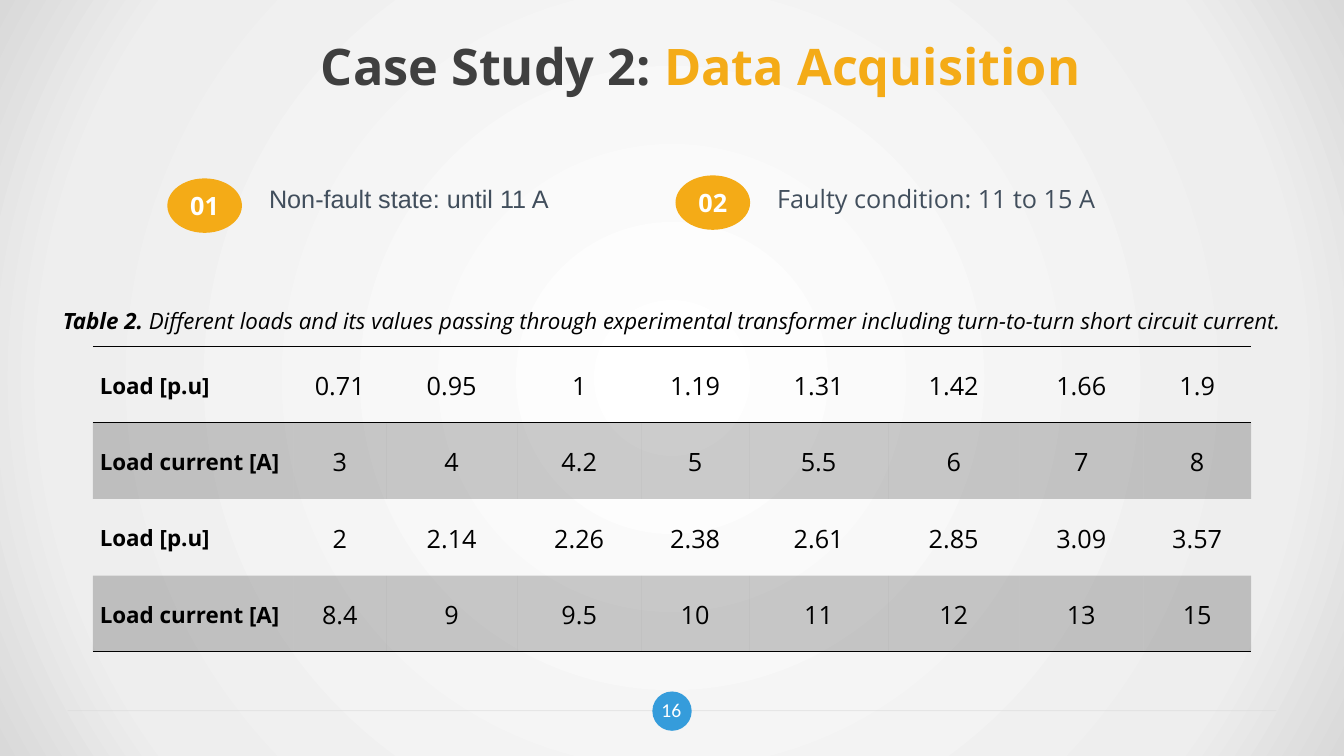
from pptx import Presentation
from pptx import util as u
from pptx.dml.color import RGBColor
from pptx.enum import shapes, text
from pptx.oxml import parse_xml
from pptx.oxml.ns import nsdecls, qn
from lxml import etree

COLORS = {"ink": "000000", "title": "3F3F3F", "accent": "F4AB17", "body": "414E5C",
          "badge": "359CDB", "rule": "D9D9D9", "white": "FFFFFF", "mid": "EEEEEE"}
CENTER = text.PP_ALIGN.CENTER
MIDDLE = text.MSO_ANCHOR.MIDDLE


def rgb(name):
    return RGBColor.from_string(COLORS[name])


def set_alpha(parent, percent):
    for clr in parent.iter(qn("a:srgbClr")):
        etree.SubElement(clr, qn("a:alpha")).set("val", str(percent * 1000))


class Deck:
    font = "Open Sans"

    def __init__(self, width, height):
        self.prs = Presentation()
        self.prs.slide_width, self.prs.slide_height = u.Inches(width), u.Inches(height)
        self.s = self.prs.slides.add_slide(self.prs.slide_layouts[5])

    def box(self, at):
        return [u.Inches(v) for v in at]

    def background(self, stops):
        gs = "".join(f'<a:gs pos="{pos * 1000}"><a:srgbClr val="{COLORS[c]}"/></a:gs>'
                     for pos, c in stops)
        bg = parse_xml(
            f'<p:bg {nsdecls("p", "a")}><p:bgPr><a:gradFill rotWithShape="1"><a:gsLst>{gs}'
            '</a:gsLst><a:path path="circle"><a:fillToRect l="50000" t="50000" r="50000" '
            'b="50000"/></a:path></a:gradFill><a:effectLst/></p:bgPr></p:bg>')
        self.s.element.cSld.insert(0, bg)

    def run(self, p, words, size, color, bold=False, italic=False, font=None):
        r = p.add_run()
        r.text = words
        r.font.size, r.font.name = u.Pt(size), font or self.font
        r.font.bold, r.font.italic = bold, italic
        r.font.color.rgb = rgb(color)

    def frame(self, sp, align=None, anchor=None, insets=(0.1, 0.05)):
        tf = sp.text_frame
        tf.word_wrap = True
        tf.auto_size = text.MSO_AUTO_SIZE.NONE
        tf.vertical_anchor = anchor
        tf.margin_left = tf.margin_right = u.Inches(insets[0])
        tf.margin_top = tf.margin_bottom = u.Inches(insets[1])
        tf.paragraphs[0].alignment = align
        return tf.paragraphs[0]

    def title(self, at):
        sp = self.s.shapes.title
        sp.left, sp.top, sp.width, sp.height = self.box(at)
        return self.frame(sp, CENTER, MIDDLE, (0.13, 0.07))

    def textbox(self, at, **style):
        sp = self.s.shapes.add_textbox(*self.box(at))
        return self.frame(sp, **style)

    def ellipse(self, at, color):
        sp = self.s.shapes.add_shape(shapes.MSO_SHAPE.OVAL, *self.box(at))
        sp.shadow.inherit = False
        sp.fill.solid()
        sp.fill.fore_color.rgb = rgb(color)
        sp.line.fill.background()
        return self.frame(sp, CENTER, MIDDLE)

    def line(self, start, end, color, width, alpha):
        cx = self.s.shapes.add_connector(shapes.MSO_CONNECTOR.STRAIGHT,
                                         *self.box(start + end))
        cx.line.color.rgb, cx.line.width = rgb(color), u.Pt(width)
        set_alpha(cx.line._ln, alpha)
        etree.SubElement(cx._element.spPr, qn("a:effectLst"))

    def border(self, cell, side):
        cell._tc.get_or_add_tcPr().append(parse_xml(
            f'<a:{side} {nsdecls("a")} w="12700"><a:solidFill><a:srgbClr '
            f'val="{COLORS["ink"]}"/></a:solidFill></a:{side}>'))

    def table(self, at, widths, heights, rows, borders):
        shape = self.s.shapes.add_table(len(rows), len(widths), *self.box(at))
        tbl = shape.table
        tbl.first_row = tbl.horz_banding = False
        # Plain style without grid lines
        shape._element.find(".//" + qn("a:tableStyleId")).text = \
            "{2D5ABB26-0587-4C30-8999-92F81FD0307C}"
        for col, width in zip(tbl.columns, widths):
            col.width = u.Inches(width)
        for i, (row, height) in enumerate(zip(rows, heights)):
            tbl.rows[i].height = u.Inches(height)
            for j, words in enumerate(row):
                cell = tbl.cell(i, j)
                for side in borders.get(i, ()):
                    self.border(cell, side)
                if i % 2:
                    cell.fill.solid()
                    cell.fill.fore_color.rgb = rgb("ink")
                    set_alpha(cell._tc.tcPr.find(qn("a:solidFill")), 20)
                else:
                    cell.fill.background()
                cell.vertical_anchor = MIDDLE
                cell.margin_left = cell.margin_right = u.Inches(0.07)
                cell.margin_top = cell.margin_bottom = 0
                p = cell.text_frame.paragraphs[0]
                p.line_spacing = 1.07
                p.alignment = CENTER if j else None
                self.run(p, words, 18 if j else 16, "ink", bold=j == 0)


def main():
    d = Deck(13.33, 7.5)
    d.background([(0, "white"), (81, "mid"), (100, "rule")])

    # Footer rule and page number
    d.line((0.67, 7.05), (12.66, 7.05), "rule", 0.75, 50)
    d.ellipse((6.47, 6.86, 0.39, 0.39), "badge")
    p = d.textbox((6.38, 6.83, 0.56, 0.42), align=CENTER, anchor=MIDDLE, insets=(0.13, 0.07))
    d.run(p, "16", 14, "white", font="Calibri")

    # Title
    p = d.title((0.95, 0.26, 12, 0.78))
    d.run(p, "Case Study 2: ", 36, "title", bold=True)
    d.run(p, "Data Acquisition", 36, "accent", bold=True)

    # Table caption
    p = d.textbox((0.48, 2.73, 12.37, 0.56), align=CENTER)
    p.line_spacing, p.space_after = 2.0, u.Pt(8)
    d.run(p, "Table 2. ", 16, "ink", bold=True, italic=True)
    d.run(p, "Different loads and its values passing through experimental transformer "
             "including turn-to-turn short circuit current.", 16, "ink", italic=True)

    # Load table
    load, current = "Load [p.u]", "Load current [A]"
    rows = [[load, "0.71", "0.95", "1", "1.19", "1.31", "1.42", "1.66", "1.9"],
            [current, "3", "4", "4.2", "5", "5.5", "6", "7", "8"],
            [load, "2", "2.14", "2.26", "2.38", "2.61", "2.85", "3.09", "3.57"],
            [current, "8.4", "9", "9.5", "10", "11", "12", "13", "15"]]
    d.table((0.92, 3.44, 11.5, 3.01), [1.99, 0.92, 1.3, 1.23, 1.07, 1.38, 1.3, 1.23, 1.07],
            [0.75, 0.76, 0.76, 0.75], rows, {0: ("lnT", "lnB"), 3: ("lnB",)})

    # Numbered conditions
    for number, words, x, y, height, font in (
            ("01", "Non-fault state: until 11 A", 1.66, 1.77, 0.61, "Arial"),
            ("02", "Faulty condition: 11 to 15 A", 6.7, 1.74, 0.5, "Open Sans")):
        d.run(d.ellipse((x, y, 0.74, 0.54), "accent"), number, 18, "white", bold=True)
        p = d.textbox((x + 0.91, 1.77, 4.52, height))
        d.run(p, words, 18, "body", font=font)

    d.prs.save("out.pptx")


if __name__ == "__main__":
    main()
